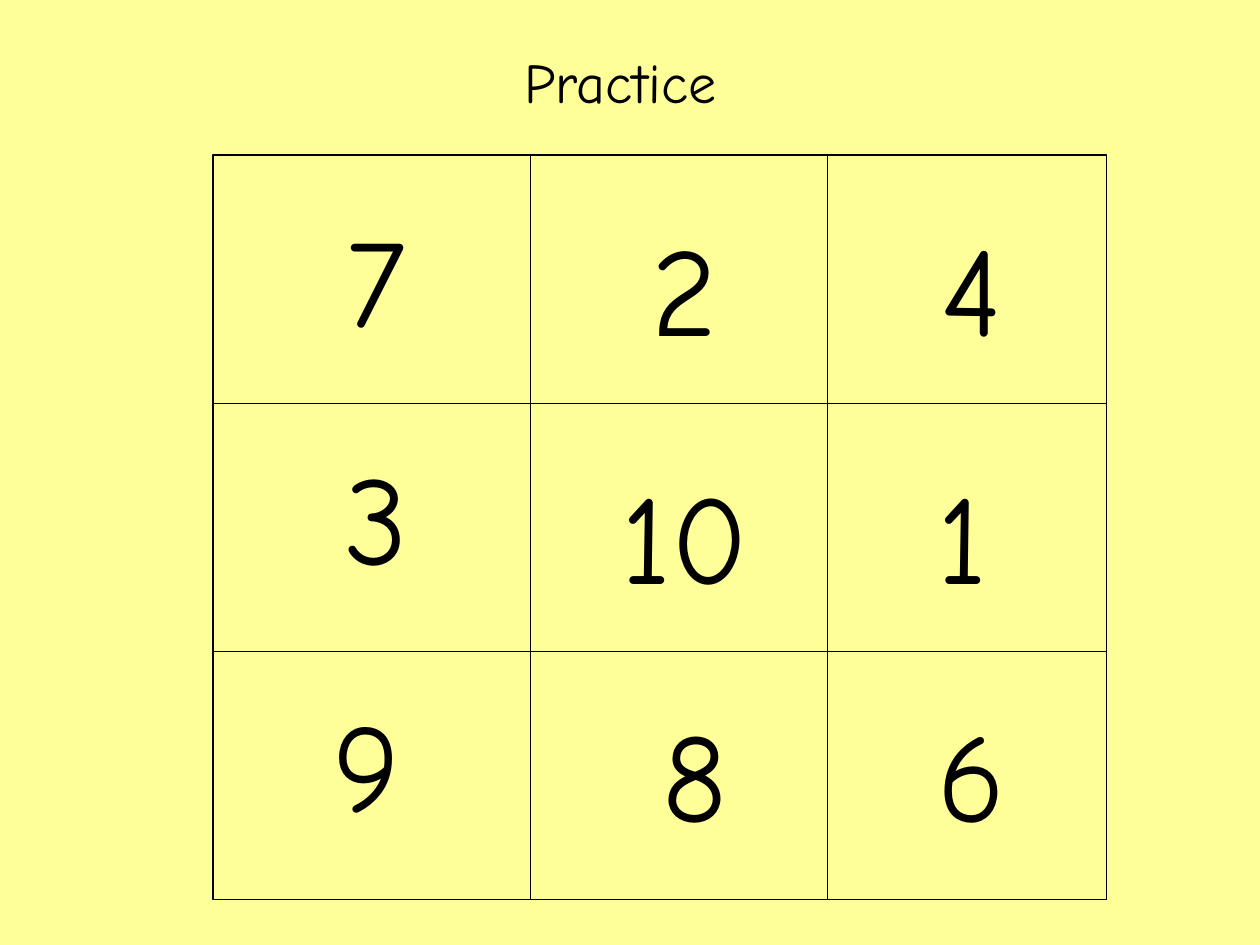
from pptx import Presentation
from pptx.dml.color import RGBColor
from pptx.enum.shapes import MSO_CONNECTOR, MSO_SHAPE
from pptx.enum.text import MSO_ANCHOR, MSO_AUTO_SIZE, PP_ALIGN
from pptx.oxml.ns import qn
from pptx.util import Inches, Pt
from lxml.etree import SubElement

COLORS = {"paper": "FFFF99", "ink": "000000"}
INK = RGBColor.from_string(COLORS["ink"])
FONT = "Comic Neue"


def style(para, size):
    para.alignment = PP_ALIGN.CENTER
    para.space_before = Pt(0)
    para.font.name = FONT
    para.font.size = Pt(size)
    para.font.color.rgb = INK


deck = Presentation()
deck.slide_width, deck.slide_height = Inches(10), Inches(7.5)
slide = deck.slides.add_slide(deck.slide_layouts[5])
slide.background.fill.solid()
slide.background.fill.fore_color.rgb = RGBColor.from_string(COLORS["paper"])

# Title
title = slide.shapes.title
title.left, title.top = Inches(0.5), Inches(0.3)
title.width, title.height = Inches(9), Inches(0.69)
title.text_frame.text = "Practice "
title.text_frame.vertical_anchor = MSO_ANCHOR.MIDDLE
style(title.text_frame.paragraphs[0], 32)

# Board of three by three cells
left, top, width, height = 1.69, 1.23, 7.09, 5.91
right, bottom = left + width, top + height
row = height / 3
board = slide.shapes.add_shape(
    MSO_SHAPE.RECTANGLE, Inches(left), Inches(top), Inches(width), Inches(height))
board.shadow.inherit = False
board.fill.background()
board.line.color.rgb = INK
board.line.width = Pt(0.75)

rules = [(x, top, x, bottom) for x in (4.21, 6.57)]
rules += [(left, top + i * row, right, top + i * row) for i in (1, 2)]
for ends in rules:
    rule = slide.shapes.add_connector(
        MSO_CONNECTOR.STRAIGHT, *[Inches(end) for end in ends])
    rule.line.color.rgb = INK
    rule.line.width = Pt(0.75)
    SubElement(rule._element.spPr, qn("a:effectLst"))

# Numbers, each with the left and top of its box
numbers = [
    ("7", 2.16, 1.55), ("2", 4.61, 1.62), ("4", 6.89, 1.62),
    ("3", 2.16, 3.44), ("10", 4.61, 3.59), ("1", 6.81, 3.59),
    ("9", 2.09, 5.4), ("8", 4.69, 5.48), ("6", 6.89, 5.48),
]
for text, x, y in numbers:
    box = slide.shapes.add_textbox(Inches(x), Inches(y), Inches(1.65), Inches(1.3))
    frame = box.text_frame
    frame.word_wrap = True
    frame.auto_size = MSO_AUTO_SIZE.SHAPE_TO_FIT_TEXT
    frame.text = text
    style(frame.paragraphs[0], 72)

deck.save("out.pptx")
